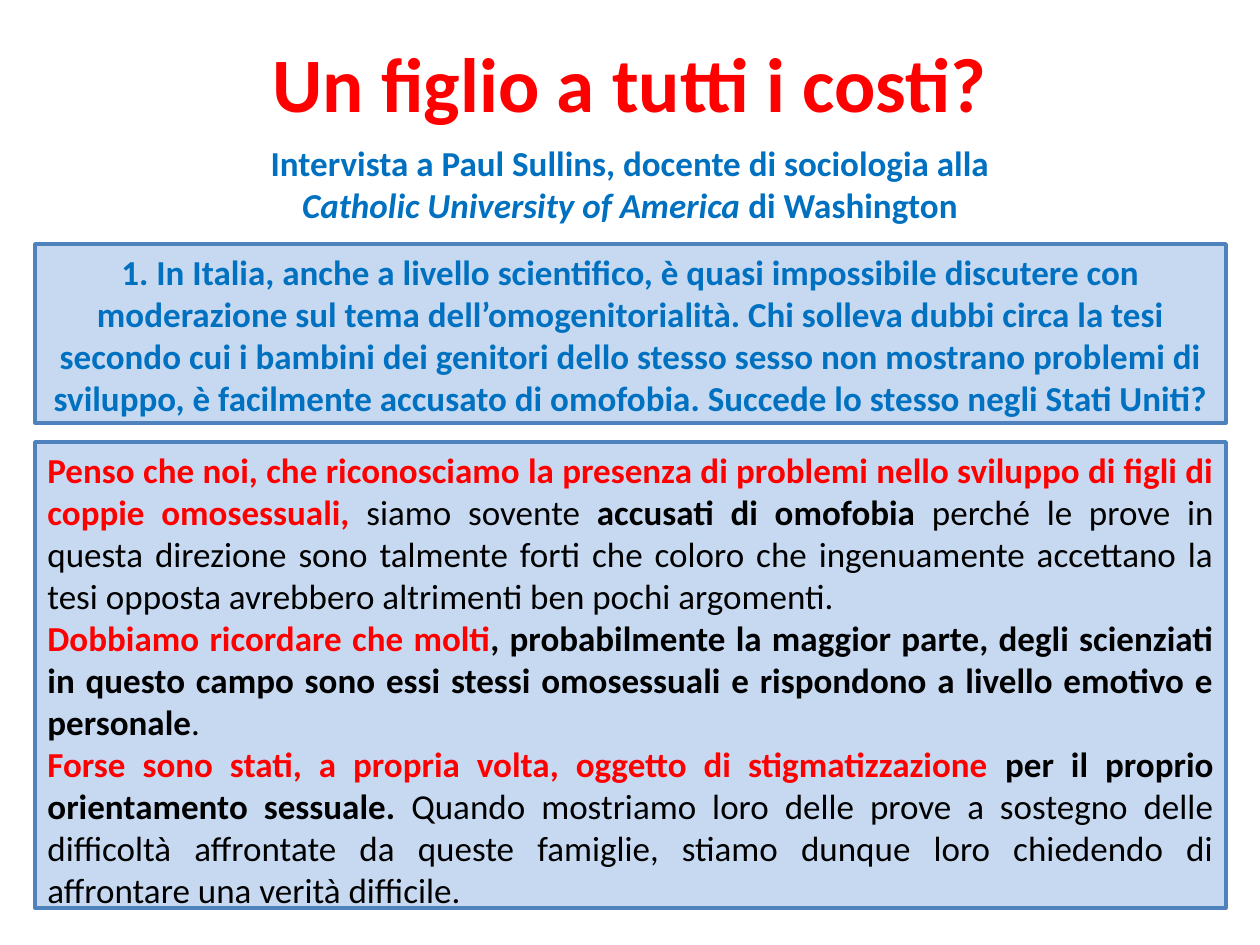
from pptx import Presentation, util as u
from pptx.dml.color import RGBColor
from pptx.enum import shapes, text

PX = 914400 / 126
RED = RGBColor(0xFF, 0x00, 0x00)
BLUE = RGBColor(0x00, 0x70, 0xC0)
BLACK = RGBColor(0x00, 0x00, 0x00)
PANEL = RGBColor(0xC6, 0xD9, 0xF1)
BORDER = RGBColor(0x4F, 0x81, 0xBD)

BASE = {"name": "Calibri", "size": u.Pt(20), "bold": False, "italic": False}
HEADING = {"size": u.Pt(44), "bold": True}
STRONG = {"bold": True}
ITALIC = {"bold": True, "italic": True}

TITLE = [[("Un figlio a tutti i costi?", RED, HEADING)]]
INTRO = [
    [("Intervista a Paul Sullins, docente di sociologia alla", BLUE, STRONG)],
    [("Catholic University of America", BLUE, ITALIC), (" di Washington", BLUE, STRONG)],
]
QUESTION = [[(
    "1. In Italia, anche a livello scientifico, è quasi impossibile discutere con "
    "moderazione sul tema dell’omogenitorialità. Chi solleva dubbi circa la tesi "
    "secondo cui i bambini dei genitori dello stesso sesso non mostrano problemi di "
    "sviluppo, è facilmente accusato di omofobia. Succede lo stesso negli Stati Uniti?",
    BLUE, STRONG)]]
ANSWER = [
    [("Penso che noi, che riconosciamo la presenza di problemi nello sviluppo di figli "
      "di coppie omosessuali, ", RED, STRONG),
     ("siamo sovente ", BLACK, {}),
     ("accusati di omofobia ", BLACK, STRONG),
     ("perché le prove in questa direzione sono talmente forti che coloro che "
      "ingenuamente accettano la tesi opposta avrebbero altrimenti ben pochi argomenti.",
      BLACK, {})],
    [("Dobbiamo ricordare che molti", RED, STRONG),
     (", probabilmente la maggior parte, degli scienziati in questo campo sono essi "
      "stessi omosessuali e rispondono a livello emotivo e personale", BLACK, STRONG),
     (".", BLACK, {})],
    [("Forse sono stati, a propria volta, oggetto di stigmatizzazione ", RED, STRONG),
     ("per il proprio orientamento sessuale. ", BLACK, STRONG),
     ("Quando mostriamo loro delle prove a sostegno delle difficoltà affrontate da "
      "queste famiglie, stiamo dunque loro chiedendo di affrontare una verità difficile.",
      BLACK, {})],
]


def emu(box):
    """Turn a box of px lengths into EMU."""
    return [round(v * PX) for v in box]


def write(sp, paragraphs, align, anchor=text.MSO_ANCHOR.TOP):
    """Fill a shape with paragraphs of (wording, colour, format) runs."""
    tf = sp.text_frame
    tf.word_wrap = True
    tf.auto_size = text.MSO_AUTO_SIZE.NONE
    tf.vertical_anchor = anchor
    for i, runs in enumerate(paragraphs):
        p = tf.paragraphs[0] if i == 0 else tf.add_paragraph()
        p.alignment = align
        for wording, color, style in runs:
            r = p.add_run()
            r.text = wording
            r.font.color.rgb = color
            for key, value in {**BASE, **style}.items():
                setattr(r.font, key, value)


def add_title(s, box):
    """Place the title placeholder in the box."""
    sp = s.shapes.title
    for key, value in zip(("left", "top", "width", "height"), emu(box)):
        setattr(sp, key, value)
    write(sp, TITLE, text.PP_ALIGN.CENTER, text.MSO_ANCHOR.MIDDLE)


def add_intro(s, box):
    """Place the line that presents the interview."""
    write(s.shapes.add_textbox(*emu(box)), INTRO, text.PP_ALIGN.CENTER)


def add_panel(s, box, paragraphs, align):
    """Place a tinted, bordered panel of text."""
    sp = s.shapes.add_shape(shapes.MSO_SHAPE.RECTANGLE, *emu(box))
    sp.shadow.inherit = False
    sp.fill.solid()
    sp.fill.fore_color.rgb = PANEL
    sp.line.color.rgb = BORDER
    sp.line.width = u.Pt(2)
    write(sp, paragraphs, align)


def main():
    """Build the slide and save it."""
    prs = Presentation()
    prs.slide_width, prs.slide_height = emu((1260, 945))
    s = prs.slides.add_slide(prs.slide_layouts[5])
    add_title(s, (134, 37, 992, 89))
    add_intro(s, (0, 135, 1260, 97))
    add_panel(s, (35, 244, 1191, 179), QUESTION, text.PP_ALIGN.CENTER)
    add_panel(s, (35, 442, 1191, 466), ANSWER, text.PP_ALIGN.JUSTIFY)
    prs.save("out.pptx")


if __name__ == "__main__":
    main()
